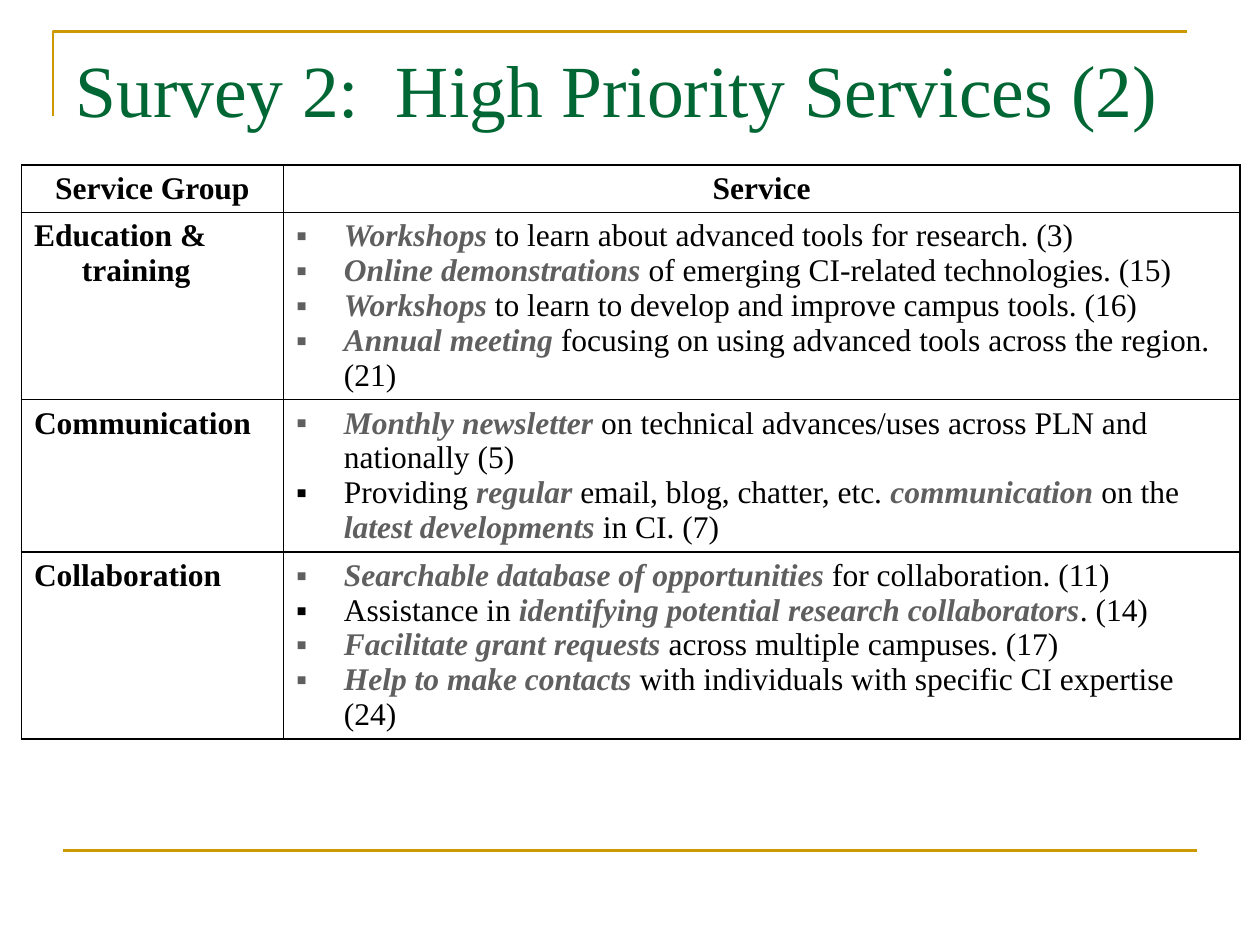
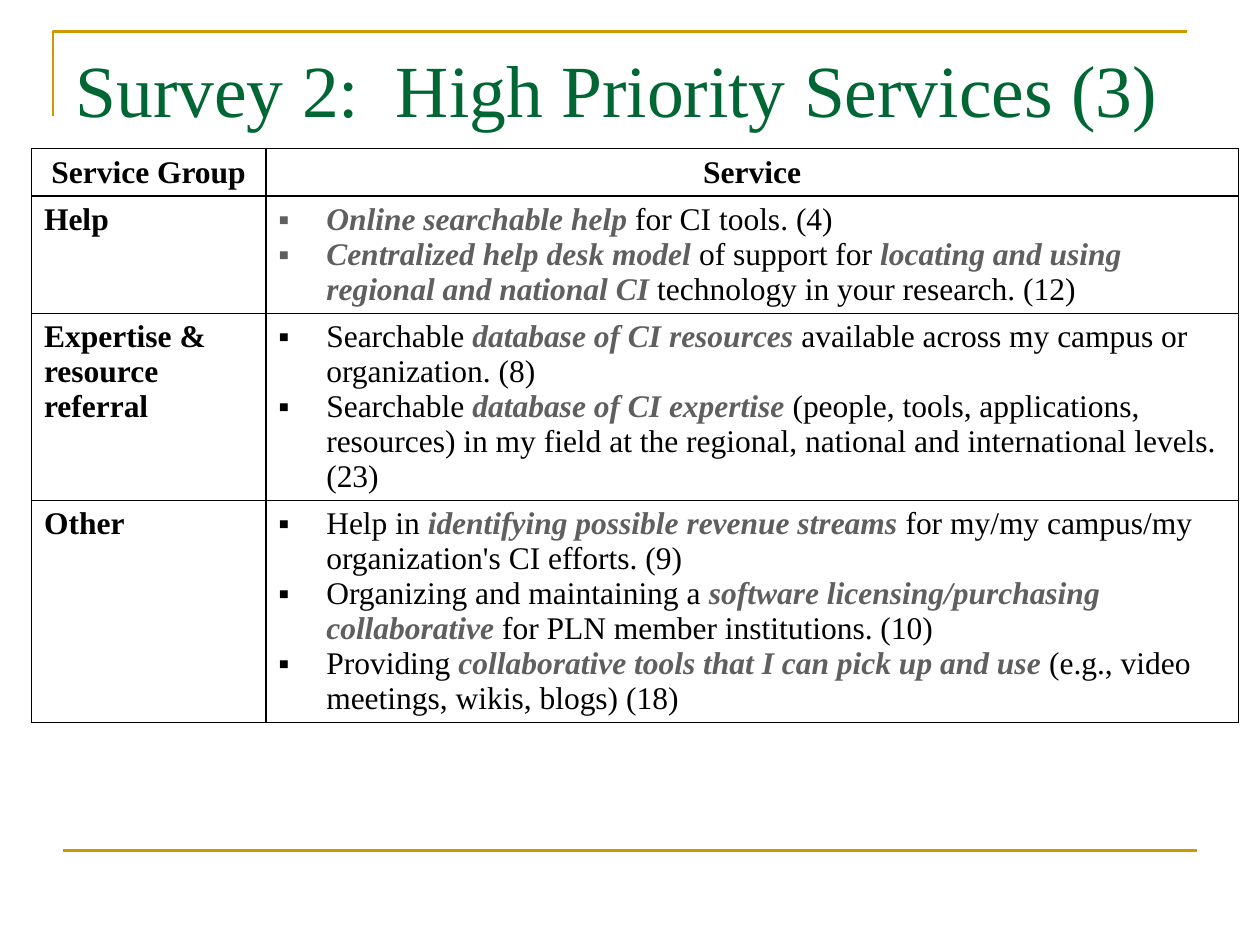
from dataclasses import dataclass

from lxml.etree import SubElement
from pptx import Presentation
from pptx.dml.color import RGBColor
from pptx.enum.shapes import MSO_CONNECTOR as Connector
from pptx.enum.text import MSO_ANCHOR as Anchor, MSO_AUTO_SIZE as AutoSize, PP_ALIGN as Align
from pptx.oxml import parse_xml
from pptx.oxml.ns import nsdecls, qn
from pptx.util import Inches, Pt

GOLD, GREEN, BLACK, GRAY = "CC9900", "006633", "000000", "5F5F5F"
FONT = "Times New Roman"
HANG = 0.38
LINE_HEIGHT, CELL_PADDING = 0.277, 0.1
HEADERS = ("Service Group", "Service")


@dataclass
class Group:
    """One table row; asterisks enclose emphasised words."""
    name: str
    services: list[str]
    lines: int
    name_hang: float = HANG


@dataclass
class ServiceSlide:
    """One slide with a table of service groups."""
    number: int
    left: float
    top: float
    widths: tuple[float, float]
    groups: list[Group]


SLIDES = [
    ServiceSlide(2, 0.17, 1.31, (2.08, 7.59), [
        Group("Education & training", [
            "*Workshops* to learn about advanced tools for research. (3)",
            "*Online demonstrations* of emerging CI-related technologies. (15)",
            "*Workshops* to learn to develop and improve campus tools. (16)",
            "*Annual meeting* focusing on using advanced tools across the region. (21)",
        ], 5),
        Group("Communication", [
            "*Monthly newsletter* on technical advances/uses across PLN and nationally (5)",
            "Providing *regular* email, blog, chatter, etc. *communication* on the "
            "*latest developments* in CI. (7)",
        ], 4),
        Group("Collaboration", [
            "*Searchable database of opportunities* for collaboration. (11)",
            "Assistance in *identifying potential research collaborators*. (14)",
            "*Facilitate grant requests* across multiple campuses. (17)",
            "*Help to make contacts* with individuals with specific CI expertise (24)",
        ], 5),
    ]),
    ServiceSlide(3, 0.25, 1.18, (1.86, 7.72), [
        Group("Help", [
            "*Online searchable help* for CI tools. (4)",
            "*Centralized help desk model* of support for *locating and using regional "
            "and national CI* technology in your research. (12)",
        ], 3),
        Group("Expertise & resource referral", [
            "Searchable *database of CI resources* available across my campus or "
            "organization. (8)",
            "Searchable *database of CI expertise* (people, tools, applications, resources) "
            "in my field at the regional, national and international levels. (23)",
        ], 5, name_hang=0),
        Group("Other", [
            "Help in *identifying possible revenue streams* for my/my campus/my "
            "organization's CI efforts. (9)",
            "Organizing and maintaining a *software licensing/purchasing collaborative* "
            "for PLN member institutions. (10)",
            "Providing *collaborative tools that I can pick up and use* (e.g., video "
            "meetings, wikis, blogs) (18)",
        ], 6),
    ]),
]


def color(value: str) -> RGBColor:
    """Turn a hex string into a colour."""
    return RGBColor.from_string(value)


def write(paragraph, text: str, size: float = 18, ink: str = BLACK, bold: bool = False,
          align: Align = Align.LEFT, hang: float = 0, bullet: str = "") -> None:
    """Write text into a paragraph, emphasising the words between asterisks."""
    paragraph.alignment = align
    properties = paragraph._p.get_or_add_pPr()
    properties.set("marL", str(Inches(hang)))
    properties.set("indent", str(-Inches(hang)))
    if bullet:
        SubElement(properties, qn("a:buFont")).set("typeface", FONT)
        SubElement(properties, qn("a:buChar")).set("char", bullet)
    for index, part in enumerate(text.split("*")):
        if not part:
            continue
        emphasised = index % 2 == 1
        run = paragraph.add_run()
        run.text = part
        run.font.name, run.font.size = FONT, Pt(size)
        run.font.bold, run.font.italic = bold or emphasised, emphasised
        run.font.color.rgb = color(GRAY if emphasised else ink)


def style_line(shape) -> None:
    """Give a shape the gold frame line."""
    shape.line.color.rgb = color(GOLD)
    shape.line.width = Pt(1.5)


def draw_frame(slide) -> None:
    """Draw the corner line above the title and the line at the foot."""
    builder = slide.shapes.build_freeform(Inches(0.42), Inches(0.92))
    builder.add_line_segments([(Inches(0.42), Inches(0.25)), (Inches(9.42), Inches(0.25))],
                              close=False)
    corner = builder.convert_to_shape()
    corner.fill.background()
    corner.shadow.inherit = False
    style_line(corner)
    footer = slide.shapes.add_connector(Connector.STRAIGHT, Inches(0.5), Inches(6.75),
                                        Inches(9.5), Inches(6.75))
    SubElement(footer._element.spPr, qn("a:effectLst"))
    style_line(footer)


def draw_title(slide, text: str) -> None:
    """Place and fill the title placeholder."""
    title = slide.shapes.title
    title.left, title.top = Inches(0.5), Inches(0.3)
    title.width, title.height = Inches(9), Inches(1.25)
    frame = title.text_frame
    frame.auto_size, frame.vertical_anchor = AutoSize.NONE, Anchor.TOP
    write(frame.paragraphs[0], text, size=42, ink=GREEN)


def style_cell(cell) -> None:
    """Clear the cell's fill and outline it in black."""
    cell.fill.background()
    properties = cell._tc.get_or_add_tcPr()
    for index, side in enumerate("LRTB"):
        properties.insert(index, parse_xml(
            f'<a:ln{side} {nsdecls("a")} w="{Pt(1)}"><a:solidFill>'
            f'<a:srgbClr val="{BLACK}"/></a:solidFill></a:ln{side}>'))


def draw_table(slide, content: ServiceSlide) -> None:
    """Draw the table of groups and their services."""
    heights = [CELL_PADDING + LINE_HEIGHT * lines
               for lines in [1] + [group.lines for group in content.groups]]
    table = slide.shapes.add_table(
        len(heights), len(HEADERS), Inches(content.left), Inches(content.top),
        Inches(sum(content.widths)), Inches(sum(heights))).table
    table.first_row = table.horz_banding = False
    for column, width in zip(table.columns, content.widths):
        column.width = Inches(width)
    for row, height in zip(table.rows, heights):
        row.height = Inches(height)
    for cell in table.iter_cells():
        style_cell(cell)
    for column, header in enumerate(HEADERS):
        write(table.cell(0, column).text_frame.paragraphs[0], header, bold=True,
              align=Align.CENTER, hang=HANG)
    for row, group in enumerate(content.groups, start=1):
        write(table.cell(row, 0).text_frame.paragraphs[0], group.name, bold=True,
              hang=group.name_hang)
        frame = table.cell(row, 1).text_frame
        for index, service in enumerate(group.services):
            paragraph = frame.add_paragraph() if index else frame.paragraphs[0]
            write(paragraph, service, hang=HANG, bullet="▪")


def main() -> None:
    """Build and save the presentation."""
    presentation = Presentation()
    presentation.slide_width, presentation.slide_height = Inches(10), Inches(7.5)
    for content in SLIDES:
        slide = presentation.slides.add_slide(presentation.slide_layouts[5])
        draw_frame(slide)
        draw_title(slide, f"Survey 2:  High Priority Services ({content.number})")
        draw_table(slide, content)
    presentation.save("out.pptx")


if __name__ == "__main__":
    main()
